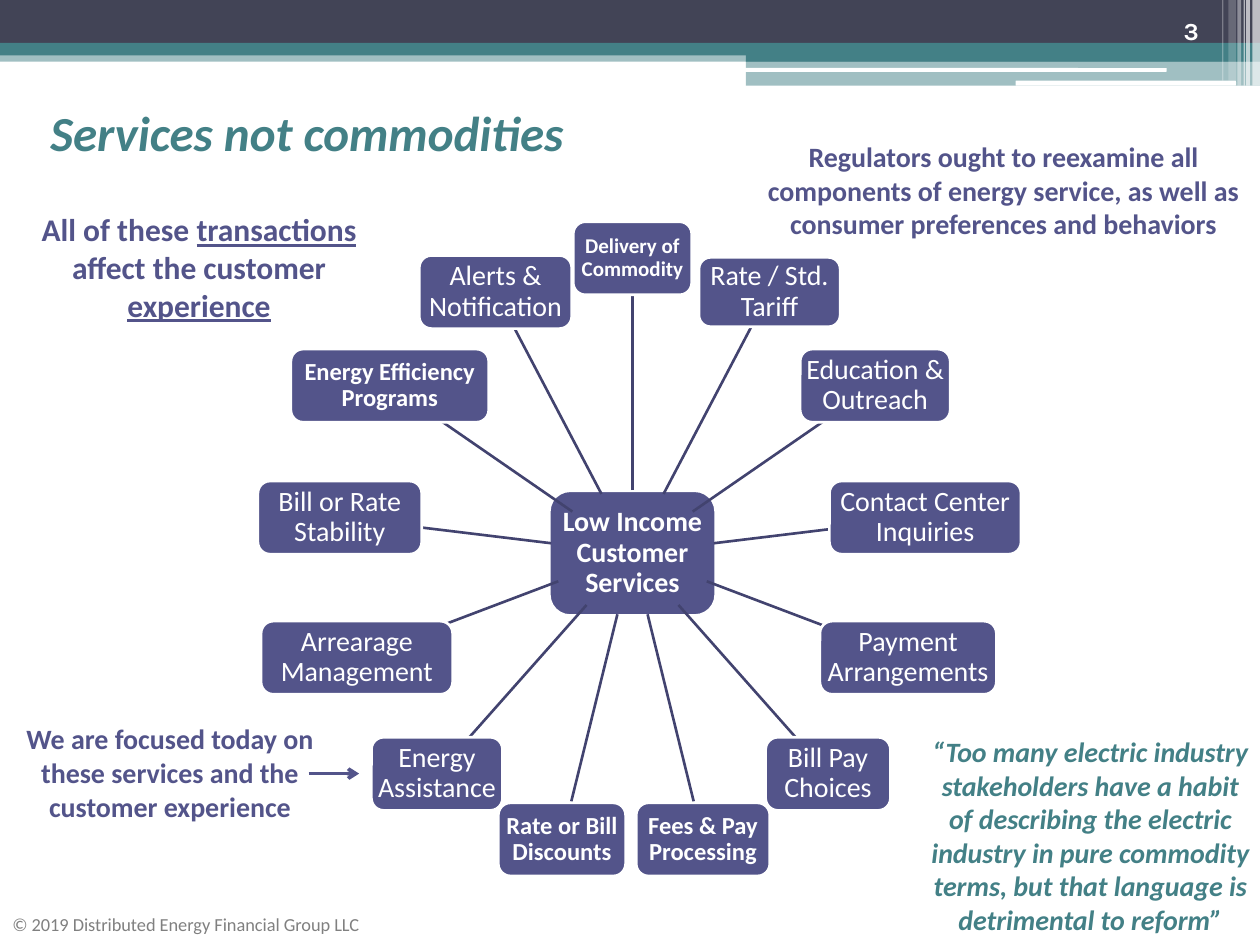
import math

import pptx
import pptx.dml.color
import pptx.enum.shapes
import pptx.enum.text
import pptx.util
from lxml import etree
from pptx.oxml.ns import qn
from pptx.util import Inches

SHAPE = pptx.enum.shapes.MSO_SHAPE
ALIGN = pptx.enum.text.PP_ALIGN
ANCHOR = pptx.enum.text.MSO_ANCHOR

WHITE, TEAL, NAVY = "FFFFFF", "438086", "424456"
PURPLE, SPOKE, GRAY = "53548A", "42436F", "808080"

# left, top, width, height, colour, opacity in percent
BANDS = [
    (0, 0.4, 10, 0.09, TEAL, 50),
    (0, 0, 10, 0.34, NAVY, 100),
    (0, 0.34, 10, 0.1, TEAL, 100),
    (5.92, 0.39, 4.08, 0.1, TEAL, 100),
    (5.92, 0.48, 4.08, 0.2, TEAL, 50),
]
WHITE_BARS = [(5.91, 0.54, 3.35, 0.03), (8.06, 0.64, 1.75, 0.04)]
# left, width, height, opacity in percent
STRIPES = [
    (9.94, 0.06, 0.68, 65), (9.89, 0.03, 0.68, 65), (9.87, 0.01, 0.68, 60),
    (9.82, 0.03, 0.68, 40), (9.75, 0.06, 0.64, 20), (9.7, 0.01, 0.64, 30),
]

# Clockwise from the top: label, width, height, text size, bold, spoke end radius
SERVICES = [
    ("Delivery of Commodity", 0.94, 0.58, 12, True, 2.04),
    ("Rate / Std. Tariff", 1.12, 0.55, 16, False, 2.04),
    ("Education & Outreach", 1.19, 0.58, 16, False, 1.92),
    ("Contact Center Inquiries", 1.52, 0.58, 16, False, 1.6),
    ("Payment Arrangements", 1.4, 0.58, 16, False, 1.79),
    ("Bill Pay Choices", 0.99, 0.58, 16, False, 1.99),
    ("Fees & Pay Processing", 1.06, 0.58, 14, True, 2.03),
    ("Rate or Bill Discounts", 1.01, 0.58, 14, True, 2.03),
    ("Energy Assistance", 1.04, 0.58, 16, False, 1.99),
    ("Arrearage Management", 1.52, 0.58, 16, False, 1.76),
    ("Bill or Rate Stability", 1.3, 0.58, 16, False, 1.7),
    ("Energy Efficiency Programs", 1.57, 0.58, 14, True, 1.88),
    ("Alerts & Notification", 1.21, 0.58, 16, False, 2.02),
]
# Where a spoke leaves the hub, by its number of steps from the top
SPOKE_STARTS = [0.5, 0.53, 0.58, 0.65, 0.63, 0.55, 0.5]
HUB_SIZE = (1.32, 0.99)
RADIUS = 2.34


def rgb(color):
    return pptx.dml.color.RGBColor.from_string(color)


def style(p, size, color, bold=False, italic=False, name="Calibri"):
    font = p.font
    font.name, font.size = name, pptx.util.Pt(size)
    font.bold, font.italic = bold, italic
    font.color.rgb = rgb(color)


def set_insets(tf, inset):
    tf.margin_left = tf.margin_right = Inches(inset)
    tf.margin_top = tf.margin_bottom = Inches(inset)


def add_block(slide, kind, box, color, opacity=100):
    s = slide.shapes.add_shape(kind, *map(Inches, box))
    s.shadow.inherit = False
    s.fill.solid()
    s.fill.fore_color.rgb = rgb(color)
    s.line.fill.background()
    if opacity < 100:
        clr = s.fill._xPr.find(qn("a:solidFill"))[0]
        etree.SubElement(clr, qn("a:alpha"), val=str(opacity * 1000))
    return s


def add_line(slide, start, end, color, width):
    s = slide.shapes.add_connector(
        pptx.enum.shapes.MSO_CONNECTOR.STRAIGHT, *map(Inches, (*start, *end)))
    s.line.color.rgb = rgb(color)
    s.line.width = pptx.util.Pt(width)
    etree.SubElement(s._element.spPr, qn("a:effectLst"))
    return s


def add_text(slide, box, runs, size, color, align=ALIGN.CENTER, **font):
    """Each run is a pair of its text and whether it is underlined."""
    tf = slide.shapes.add_textbox(*map(Inches, box)).text_frame
    tf.word_wrap = True
    p = tf.paragraphs[0]
    p.alignment = align
    style(p, size, color, **font)
    for text, underlined in runs:
        r = p.add_run()
        r.text = text
        if underlined:
            r.font.underline = True
    return tf


def add_banner(slide):
    for *box, color, opacity in BANDS:
        add_block(slide, SHAPE.RECTANGLE, box, color, opacity)
    for box in WHITE_BARS:
        add_block(slide, SHAPE.ROUNDED_RECTANGLE, box, WHITE)
    for left, width, height, opacity in STRIPES:
        add_block(slide, SHAPE.RECTANGLE, (left, 0, width, height), WHITE, opacity)
    tf = add_text(slide, (9.04, 0.07, 0.83, 0.34), [("3", False)], 14, WHITE,
                  bold=True, name="Karla")
    tf.vertical_anchor = ANCHOR.MIDDLE
    set_insets(tf, 0.05)


def set_title(slide, box, text):
    s = slide.shapes.title
    s.left, s.top, s.width, s.height = map(Inches, box)
    tf = s.text_frame
    tf.text = text
    tf.vertical_anchor = ANCHOR.MIDDLE
    p = tf.paragraphs[0]
    p.alignment = ALIGN.LEFT
    style(p, 28, TEAL, bold=True, italic=True)


def add_node(slide, center, size, text, points, bold):
    box = (center[0] - size[0] / 2, center[1] - size[1] / 2, *size)
    s = add_block(slide, SHAPE.ROUNDED_RECTANGLE, box, PURPLE)
    s.line.color.rgb = rgb(WHITE)
    s.line.width = pptx.util.Pt(1.5)
    tf = s.text_frame
    tf.word_wrap = True
    tf.vertical_anchor = ANCHOR.MIDDLE
    set_insets(tf, 0.01)
    p = tf.paragraphs[0]
    p.text = text
    p.alignment = ALIGN.CENTER
    p.line_spacing = 0.9
    style(p, points, WHITE, bold=bold)


def add_wheel(slide, center):
    """Hub with the services evenly spaced on a circle around it."""
    add_node(slide, center, HUB_SIZE, "Low Income Customer\vServices", 16, True)
    count = len(SERVICES)
    for i, (text, width, height, points, bold, spoke_end) in enumerate(SERVICES):
        angle = 2 * math.pi * i / count

        def at(radius):
            return (center[0] + radius * math.sin(angle),
                    center[1] - radius * math.cos(angle))

        spoke_start = SPOKE_STARTS[min(i, count - i)]
        add_line(slide, at(spoke_start), at(spoke_end), SPOKE, 1.5)
        add_node(slide, at(RADIUS), (width, height), text, points, bold)


def add_remarks(slide):
    add_text(slide, (5.96, 1.06, 4.01, 0.91),
             [("Regulators ought to reexamine all components of energy service, "
               "as well as consumer preferences and behaviors", False)],
             16, PURPLE, bold=True)
    add_text(slide, (0.05, 5.68, 2.6, 0.91),
             [("We are focused today on these services and the customer experience",
               False)], 16, PURPLE, bold=True)
    arrow = add_line(slide, (2.45, 6.14), (2.85, 6.14), PURPLE, 2)
    etree.SubElement(arrow.line._get_or_add_ln(), qn("a:tailEnd"), type="arrow")
    add_text(slide, (7.27, 5.78, 2.77, 1.72),
             [("“Too many electric industry stakeholders have a habit of describing "
               "the electric industry in pure commodity terms, but that language is "
               "detrimental to reform”", False)],
             16, TEAL, bold=True, italic=True)
    add_text(slide, (0.17, 1.62, 2.82, 1.01),
             [("All of these ", False), ("transactions", True),
              (" affect the customer ", False), ("experience", True)],
             18, PURPLE, bold=True)


def main():
    prs = pptx.Presentation()
    prs.slide_width, prs.slide_height = Inches(10), Inches(7.5)
    slide = prs.slides.add_slide(prs.slide_layouts[5])
    add_banner(slide)
    set_title(slide, (0.3, 0.7, 9.4, 0.7), "Services not commodities")
    add_wheel(slide, (5.02, 4.39))
    add_text(slide, (0, 7.2, 4.3, 0.3),
             [("© 2019 Distributed Energy Financial Group LLC", False)],
             10.5, GRAY, align=ALIGN.LEFT)
    add_remarks(slide)
    prs.save("out.pptx")


if __name__ == "__main__":
    main()
